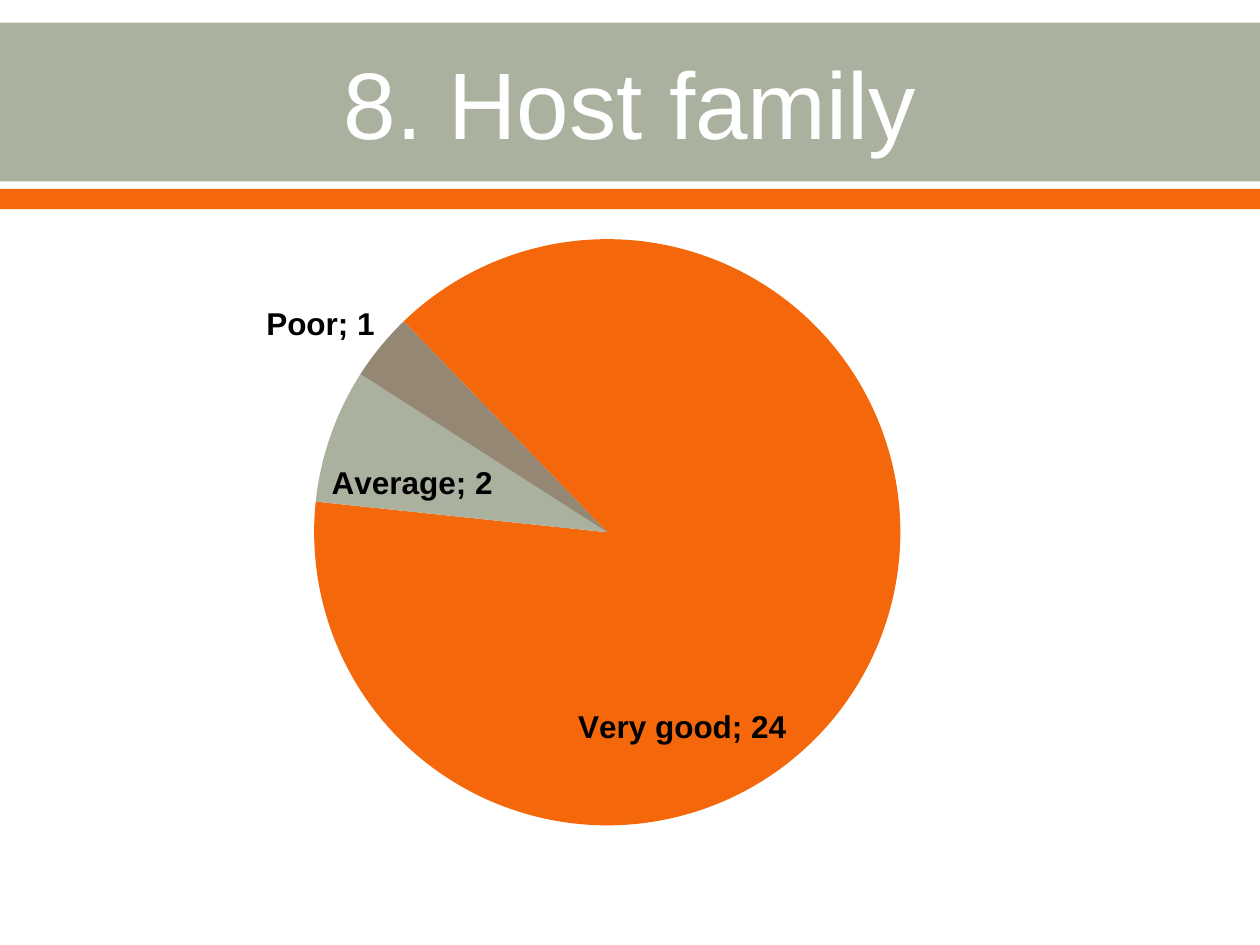
from lxml import etree
from pptx import Presentation
from pptx.chart.data import CategoryChartData
from pptx.dml.color import RGBColor
from pptx.enum.chart import XL_CHART_TYPE, XL_LABEL_POSITION
from pptx.enum.shapes import MSO_SHAPE
from pptx.enum.text import MSO_ANCHOR, PP_ALIGN
from pptx.oxml.ns import qn
from pptx.util import Inches, Pt

RECTANGLE = MSO_SHAPE.RECTANGLE
PIE = XL_CHART_TYPE.PIE
CENTER_LABEL = XL_LABEL_POSITION.CENTER
OUTSIDE_LABEL = XL_LABEL_POSITION.OUTSIDE_END
MIDDLE = MSO_ANCHOR.MIDDLE
CENTER = PP_ALIGN.CENTER

FONT = "Arial"
SAGE, ORANGE, BROWN = "ABB19F", "F4680B", "948774"
WHITE, BLACK = "FFFFFF", "000000"
RATINGS = [
    ("Very good", 24, ORANGE, CENTER_LABEL, (-0.05, 0.21)),
    ("Average", 2, SAGE, CENTER_LABEL, (-0.05, 0)),
    ("Poor", 1, BROWN, OUTSIDE_LABEL, None),
]


def color(value):
    return RGBColor.from_string(value)


def style_font(font, size, value, bold=False):
    font.name = FONT
    font.size = Pt(size)
    font.bold = bold
    font.color.rgb = color(value)


def add_band(slide, left, top, width, height, fill):
    band = slide.shapes.add_shape(
        RECTANGLE, Inches(left), Inches(top), Inches(width), Inches(height))
    band.shadow.inherit = False
    band.fill.solid()
    band.fill.fore_color.rgb = color(fill)
    band.line.fill.background()


def add_header(slide, left, top, width, height, title):
    add_band(slide, left, top, width, 1.26, SAGE)
    add_band(slide, left, top + height - 0.16, width, 0.16, ORANGE)
    text_box = slide.shapes.add_textbox(
        Inches(left + 0.5), Inches(top + 0.02), Inches(width - 1), Inches(1.22))
    text_frame = text_box.text_frame
    text_frame.word_wrap = True
    text_frame.vertical_anchor = MIDDLE
    text_frame.text = title
    paragraph = text_frame.paragraphs[0]
    paragraph.alignment = CENTER
    style_font(paragraph.runs[0].font, 54, WHITE)


def make_layout(**settings):
    layout = etree.Element(qn("c:layout"))
    manual = etree.SubElement(layout, qn("c:manualLayout"))
    for name, value in settings.items():
        etree.SubElement(manual, qn(f"c:{name}")).set("val", str(value))
    return layout


def place_pie(chart, left, top, width, height):
    plot_area = chart.plots[0]._element.getparent()
    for layout in plot_area.findall(qn("c:layout")):
        plot_area.remove(layout)
    plot_area.insert(0, make_layout(
        layoutTarget="inner", xMode="edge", yMode="edge",
        x=left, y=top, w=width, h=height))


def label_point(point, position, offset):
    label = point.data_label
    style_font(label.font, 18, BLACK, True)
    label.position = position
    element = label._dLbl
    element.find(qn("c:showCatName")).set("val", "1")
    separator = etree.Element(qn("c:separator"))
    separator.text = "; "
    element.find(qn("c:showBubbleSize")).addnext(separator)
    if offset:
        element.find(qn("c:idx")).addnext(make_layout(x=offset[0], y=offset[1]))


def add_rating_pie(slide, left, top, width, height):
    chart_data = CategoryChartData()
    chart_data.categories = [rating[0] for rating in RATINGS]
    chart_data.add_series("Series 1", [rating[1] for rating in RATINGS])
    chart = slide.shapes.add_chart(
        PIE, Inches(left), Inches(top), Inches(width), Inches(height),
        chart_data).chart
    chart.has_title = False
    chart.has_legend = False
    style_font(chart.font, 18, BLACK)
    place_pie(chart, 0.22, 0.03, 0.52, 0.94)

    plot = chart.plots[0]
    plot.vary_by_categories = True
    angle = plot._element.find(qn("c:firstSliceAng"))
    if angle is None:
        angle = etree.SubElement(plot._element, qn("c:firstSliceAng"))
    angle.set("val", "316")

    series = plot.series[0]
    for index, (_, _, fill, position, offset) in enumerate(RATINGS):
        point = series.points[index]
        point.format.fill.solid()
        point.format.fill.fore_color.rgb = color(fill)
        point.format.line.fill.background()
        label_point(point, position, offset)
    leader_lines = series._element.find(
        f"{qn('c:dLbls')}/{qn('c:showLeaderLines')}")
    if leader_lines is not None:
        leader_lines.set("val", "0")


def main():
    presentation = Presentation()
    presentation.slide_width = Inches(10)
    presentation.slide_height = Inches(7.5)
    slide = presentation.slides.add_slide(presentation.slide_layouts[6])
    add_header(slide, 0, 0.18, 10, 1.48, "8. Host family")
    add_rating_pie(slide, 0.5, 1.75, 9, 4.95)
    presentation.save("out.pptx")


if __name__ == "__main__":
    main()
